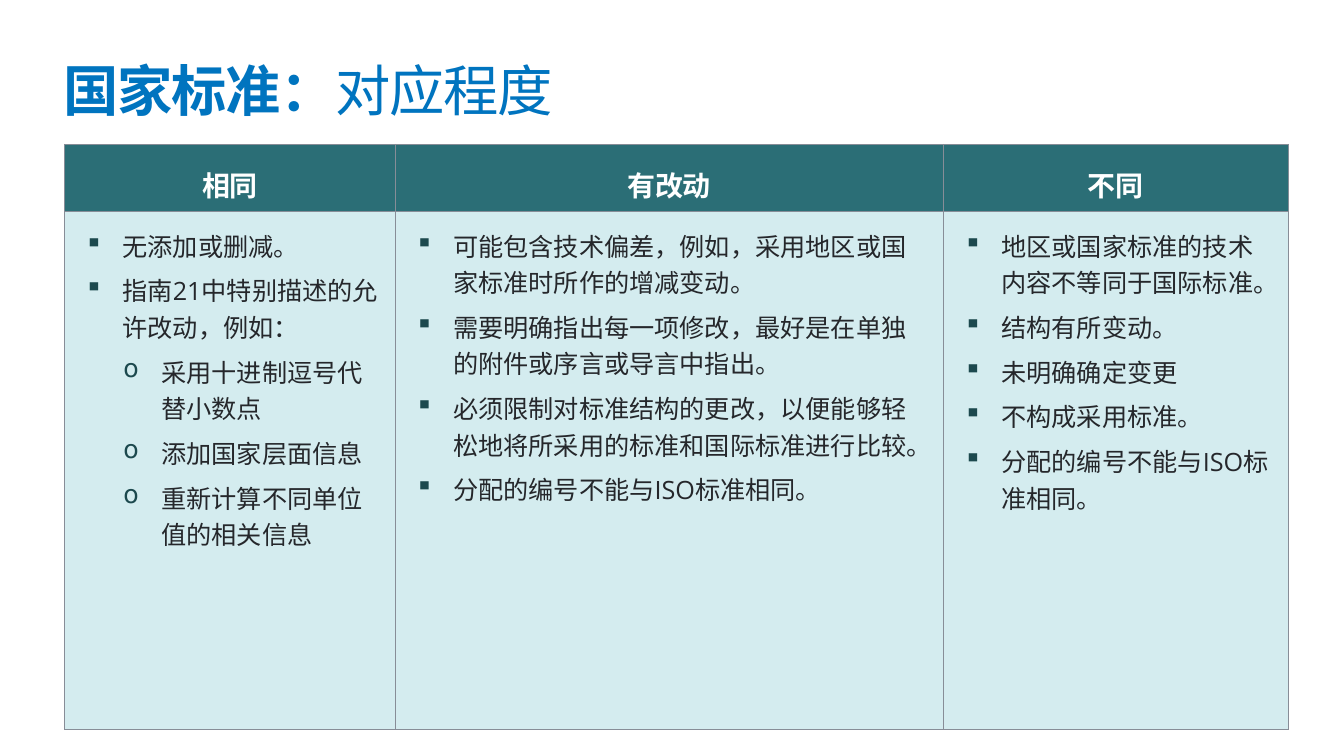
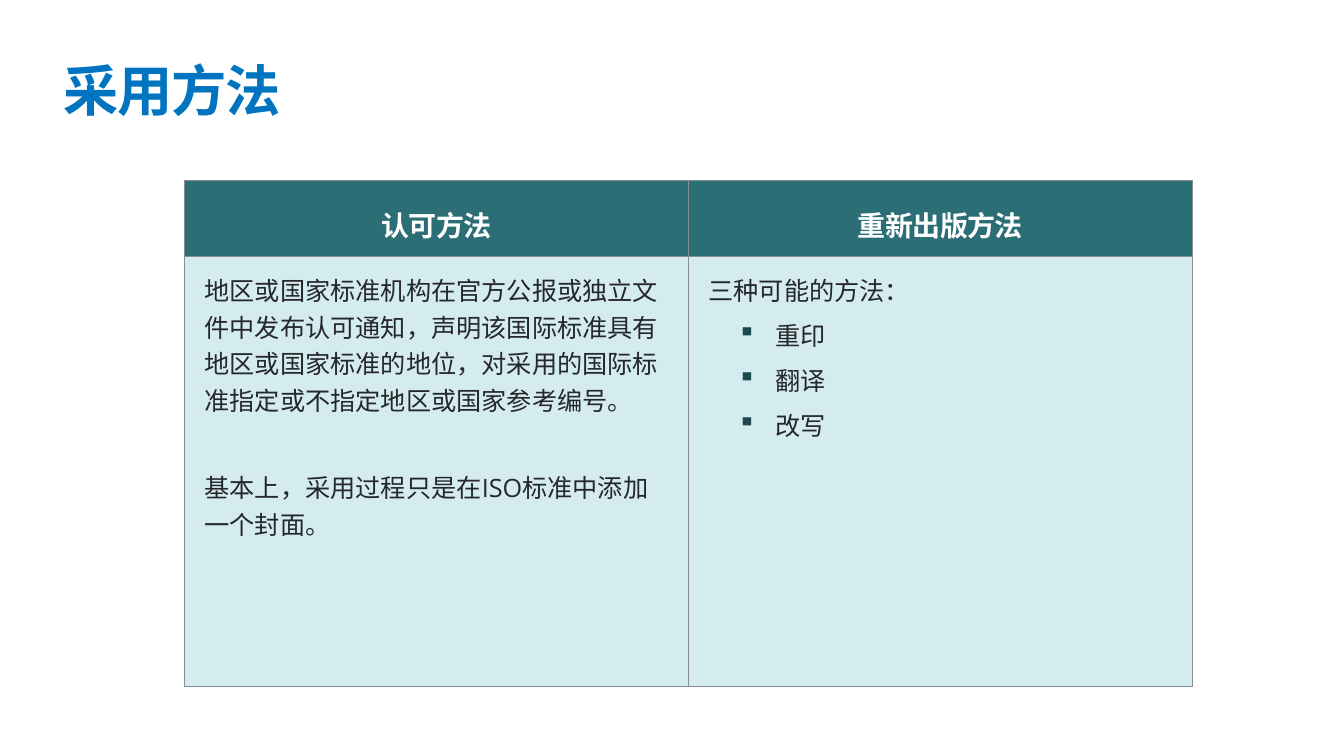
"""Build two slides on national standards: degrees of correspondence and adoption methods."""
import dataclasses

import pptx
import pptx.dml.color
import pptx.enum.text
import pptx.oxml
import pptx.oxml.ns
import pptx.util

Inches, Pt = pptx.util.Inches, pptx.util.Pt
RGBColor = pptx.dml.color.RGBColor


@dataclasses.dataclass(frozen=True)
class Theme:
    title: str = "0074BF"
    header_text: str = "FFFFFF"
    header_fill: str = "2B6E76"
    body_text: str = "25272B"
    body_fill: str = "D4ECEF"
    bullet: str = "1C494E"
    border: str = "878D97"
    heading_font: str = "TeX Gyre Adventor"
    body_font: str = "Open Sans"
    title_size: int = 79
    header_size: int = 40
    body_size: int = 36


theme = Theme()
title_style = (theme.heading_font, theme.title_size, theme.title, -1.6)
header_style = (theme.heading_font, theme.header_size, theme.header_text, -0.7)
body_style = (theme.body_font, theme.body_size, theme.body_text, 0)

hanging = 0.75
item_styles = {
    "square": (0, 0.75, "▪"),
    "circle": (1, 1.52, "o"),
    "indented": (0, 1.33, "▪"),
}

pages = [
    {
        "title": [("国家标准：", True), ("对应程度", False)],
        "corner": (1.28, 2.86),
        "columns": [6.56, 10.88, 6.84],
        "rows": [1.34, 10.28],
        "right_margin": 0.3,
        "headers": ["相同", "有改动", "不同"],
        "bodies": [
            [
                ("square", "无添加或删减。"),
                ("square", "指南21中特别描述的允许改动，例如："),
                ("circle", "采用十进制逗号代替小数点"),
                ("circle", "添加国家层面信息"),
                ("circle", "重新计算不同单位值的相关信息"),
            ],
            [
                ("square", "可能包含技术偏差，例如，采用地区或国家标准时所作的增减变动。"),
                ("square", "需要明确指出每一项修改，最好是在单独的附件或序言或导言中指出。"),
                ("square", "必须限制对标准结构的更改，以便能够轻松地将所采用的标准和国际标准进行比较。"),
                ("square", "分配的编号不能与ISO标准相同。"),
            ],
            [
                ("square", "地区或国家标准的技术内容不等同于国际标准。"),
                ("square", "结构有所变动。"),
                ("square", "未明确确定变更"),
                ("square", "不构成采用标准。"),
                ("square", "分配的编号不能与ISO标准相同。"),
            ],
        ],
    },
    {
        "title": [("采用方法", True)],
        "corner": (3.66, 3.57),
        "columns": [10, 10],
        "rows": [1.52, 8.53],
        "right_margin": 0.4,
        "headers": ["认可方法", "重新出版方法"],
        "bodies": [
            [
                ("plain", "地区或国家标准机构在官方公报或独立文件中发布认可通知，"
                          "声明该国际标准具有地区或国家标准的地位，"
                          "对采用的国际标准指定或不指定地区或国家参考编号。"),
                ("spaced", "基本上，采用过程只是在ISO标准中添加一个封面。"),
            ],
            [
                ("plain", "三种可能的方法："),
                ("indented", "重印"),
                ("indented", "翻译"),
                ("indented", "改写"),
            ],
        ],
    },
]


def add_span(para, text, style, bold=False):
    font_name, size, color, spacing = style
    span = para.add_run()
    span.text = text
    span.font.name = font_name
    span.font.size = Pt(size)
    span.font.bold = bold
    span.font.color.rgb = RGBColor.from_string(color)
    span.font._element.set("spc", str(round(spacing * 100)))


def paint_cell(cell, fill):
    properties = cell._tc.get_or_add_tcPr()
    for side in ("lnL", "lnR", "lnT", "lnB"):
        properties.append(pptx.oxml.parse_xml(
            f'<a:{side} {pptx.oxml.ns.nsdecls("a")} w="{Pt(1)}"><a:solidFill>'
            f'<a:srgbClr val="{theme.border}"/></a:solidFill></a:{side}>'))
    cell.fill.solid()
    cell.fill.fore_color.rgb = RGBColor.from_string(fill)


deck = pptx.Presentation()
deck.slide_width, deck.slide_height = Inches(26.67), Inches(15)

for content in pages:
    page = deck.slides.add_slide(deck.slide_layouts[6])

    box = page.shapes.add_textbox(Inches(1.16), Inches(0.8), Inches(25), Inches(1.57))
    box.text_frame.word_wrap = True
    box.text_frame.auto_size = pptx.enum.text.MSO_AUTO_SIZE.SHAPE_TO_FIT_TEXT
    para = box.text_frame.paragraphs[0]
    para.line_spacing = 1.2
    for text, bold in content["title"]:
        add_span(para, text, title_style, bold)

    columns, rows = content["columns"], content["rows"]
    left, top = content["corner"]
    table = page.shapes.add_table(
        len(rows), len(columns), Inches(left), Inches(top),
        Inches(sum(columns)), Inches(sum(rows))).table
    table.horz_banding = False
    for row, height in zip(table.rows, rows):
        row.height = Inches(height)

    for index, width in enumerate(columns):
        table.columns[index].width = Inches(width)

        header = table.cell(0, index)
        paint_cell(header, theme.header_fill)
        header.vertical_anchor = pptx.enum.text.MSO_ANCHOR.MIDDLE
        para = header.text_frame.paragraphs[0]
        para.alignment = pptx.enum.text.PP_ALIGN.CENTER
        para.line_spacing = 1.3
        add_span(para, content["headers"][index], header_style, True)

        body = table.cell(1, index)
        paint_cell(body, theme.body_fill)
        body.margin_left, body.margin_top = Inches(0.4), Inches(0.3)
        body.margin_right = Inches(content["right_margin"])
        body.margin_bottom = Inches(0.15)
        for number, (kind, text) in enumerate(content["bodies"][index]):
            frame = body.text_frame
            para = frame.add_paragraph() if number else frame.paragraphs[0]
            para.space_after = Pt(12)
            if kind == "spaced":
                para.space_before = Pt(61)
            if kind in item_styles:
                level, indent, symbol = item_styles[kind]
                para.level = level
                properties = para._p.get_or_add_pPr()
                properties.set("marL", str(Inches(indent)))
                properties.set("indent", str(-Inches(hanging)))
                for bullet in (
                        f'<a:buClr {pptx.oxml.ns.nsdecls("a")}>'
                        f'<a:srgbClr val="{theme.bullet}"/></a:buClr>',
                        f'<a:buChar {pptx.oxml.ns.nsdecls("a")} char="{symbol}"/>'):
                    properties.append(pptx.oxml.parse_xml(bullet))
            add_span(para, text, body_style)

deck.save("out.pptx")
